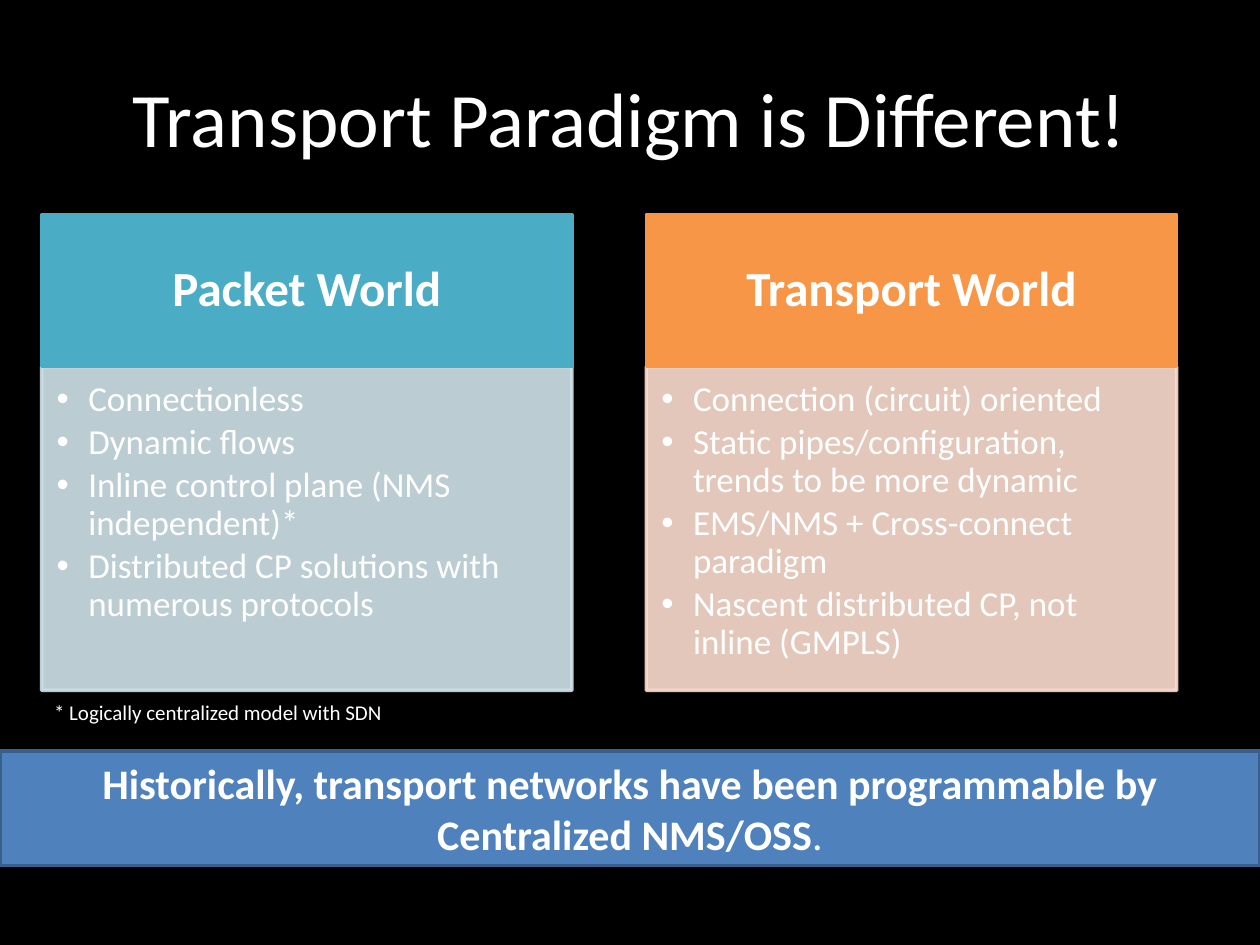
from lxml import etree
from pptx import Presentation
from pptx.dml.color import RGBColor
from pptx.enum import shapes, text
from pptx.oxml import ns
from pptx.util import Cm, Pt

FONT = "Calibri"
BLACK = RGBColor(0x00, 0x00, 0x00)
WHITE = RGBColor(0xFF, 0xFF, 0xFF)
TEAL = RGBColor(0x4B, 0xAC, 0xC6)
PALE_TEAL = RGBColor(0xD0, 0xE3, 0xEA)
ORANGE = RGBColor(0xF7, 0x96, 0x46)
PALE_ORANGE = RGBColor(0xFC, 0xDD, 0xCF)
BLUE = RGBColor(0x4F, 0x81, 0xBD)
DARK_BLUE = RGBColor(0x3A, 0x5F, 0x8C)

PACKET_POINTS = [
    "Connectionless",
    "Dynamic flows",
    "Inline control plane (NMS independent)*",
    "Distributed CP solutions with numerous protocols",
]
TRANSPORT_POINTS = [
    "Connection (circuit) oriented",
    "Static pipes/configuration, trends to be more dynamic",
    "EMS/NMS + Cross-connect paradigm",
    "Nascent distributed CP, not inline (GMPLS)",
]


def place(shape, left, top, width, height):
    shape.left, shape.top = Cm(left), Cm(top)
    shape.width, shape.height = Cm(width), Cm(height)


def add_span(para, words, size, bold=False):
    span = para.add_run()
    span.text = words
    span.font.name = FONT
    span.font.size = Pt(size)
    span.font.bold = bold
    span.font.color.rgb = WHITE


def set_frame(frame, anchor, margins=None):
    frame.word_wrap = True
    frame.auto_size = text.MSO_AUTO_SIZE.NONE
    frame.vertical_anchor = anchor
    if margins:
        (frame.margin_left, frame.margin_top,
         frame.margin_right, frame.margin_bottom) = map(Cm, margins)


def paint(shape, fill, line, opacity=100):
    shape.fill.solid()
    shape.fill.fore_color.rgb = fill
    shape.line.color.rgb = line
    shape.line.width = Pt(2)
    if opacity < 100:
        for color in shape._element.spPr.iter(ns.qn("a:srgbClr")):
            etree.SubElement(color, ns.qn("a:alpha"), val=str(opacity * 1000))


def add_bar(page, box, fill, line):
    bar = page.shapes.add_shape(shapes.MSO_SHAPE.RECTANGLE, *map(Cm, box))
    bar.shadow.inherit = False
    paint(bar, fill, line)
    return bar


def set_bullet(para):
    props = para._p.get_or_add_pPr()
    props.set("marL", str(Cm(0.64)))
    props.set("indent", str(Cm(-0.64)))
    etree.SubElement(props, ns.qn("a:buChar"), char="•")


def fill_title(page, box):
    title = page.shapes.title
    place(title, *box)
    set_frame(title.text_frame, text.MSO_ANCHOR.MIDDLE)
    para = title.text_frame.paragraphs[0]
    para.alignment = text.PP_ALIGN.CENTER
    add_span(para, "Transport Paradigm is Different!", 44)


def fill_column(page, body, box, heading, points, strong, pale):
    left, top, width, height = box
    header_height = 3.06

    # Coloured header
    header = add_bar(page, (left, top, width, header_height), strong, strong)
    set_frame(header.text_frame, text.MSO_ANCHOR.MIDDLE, (0.56, 0.3, 0.56, 0.3))
    para = header.text_frame.paragraphs[0]
    para.alignment = text.PP_ALIGN.CENTER
    para.line_spacing = 0.9
    add_span(para, heading, 28, bold=True)

    # Bullet list beneath it
    place(body, left, top + header_height, width, height - header_height)
    paint(body, pale, pale, opacity=90)
    frame = body.text_frame
    set_frame(frame, text.MSO_ANCHOR.TOP, (0.3, 0.3, 0.41, 0.43))
    for index, point in enumerate(points):
        para = frame.add_paragraph() if index else frame.paragraphs[0]
        para.line_spacing = 0.9
        para.space_before = Pt(0)
        para.space_after = Pt(3)
        set_bullet(para)
        add_span(para, point, 20)


def add_banner(page, box):
    frame = add_bar(page, box, BLUE, DARK_BLUE).text_frame
    set_frame(frame, text.MSO_ANCHOR.MIDDLE)
    first, second = frame.paragraphs[0], frame.add_paragraph()
    first.alignment = second.alignment = text.PP_ALIGN.CENTER
    add_span(first, "Historically, transport networks have been programmable by",
             24, bold=True)
    add_span(second, "Centralized NMS/OSS", 24, bold=True)
    add_span(second, ".", 24)


def add_footnote(page, box):
    frame = page.shapes.add_textbox(*map(Cm, box)).text_frame
    set_frame(frame, text.MSO_ANCHOR.TOP)
    add_span(frame.paragraphs[0], "* Logically centralized model with SDN", 12)


def main():
    deck = Presentation()
    deck.slide_width, deck.slide_height = Cm(25.4), Cm(19.05)
    page = deck.slides.add_slide(deck.slide_layouts[3])  # title and two lists
    page.background.fill.solid()
    page.background.fill.fore_color.rgb = BLACK

    fill_title(page, (1.27, 0.76, 22.86, 3.18))
    left_list, right_list = page.placeholders[1], page.placeholders[2]
    fill_column(page, left_list, (0.84, 4.33, 10.69, 9.59),
                "Packet World", PACKET_POINTS, TEAL, PALE_TEAL)
    fill_column(page, right_list, (13.03, 4.33, 10.69, 9.59),
                "Transport World", TRANSPORT_POINTS, ORANGE, PALE_ORANGE)
    add_banner(page, (0, 15.14, 25.4, 2.31))
    add_footnote(page, (0.84, 13.97, 16.84, 0.76))
    deck.save("out.pptx")


if __name__ == "__main__":
    main()
